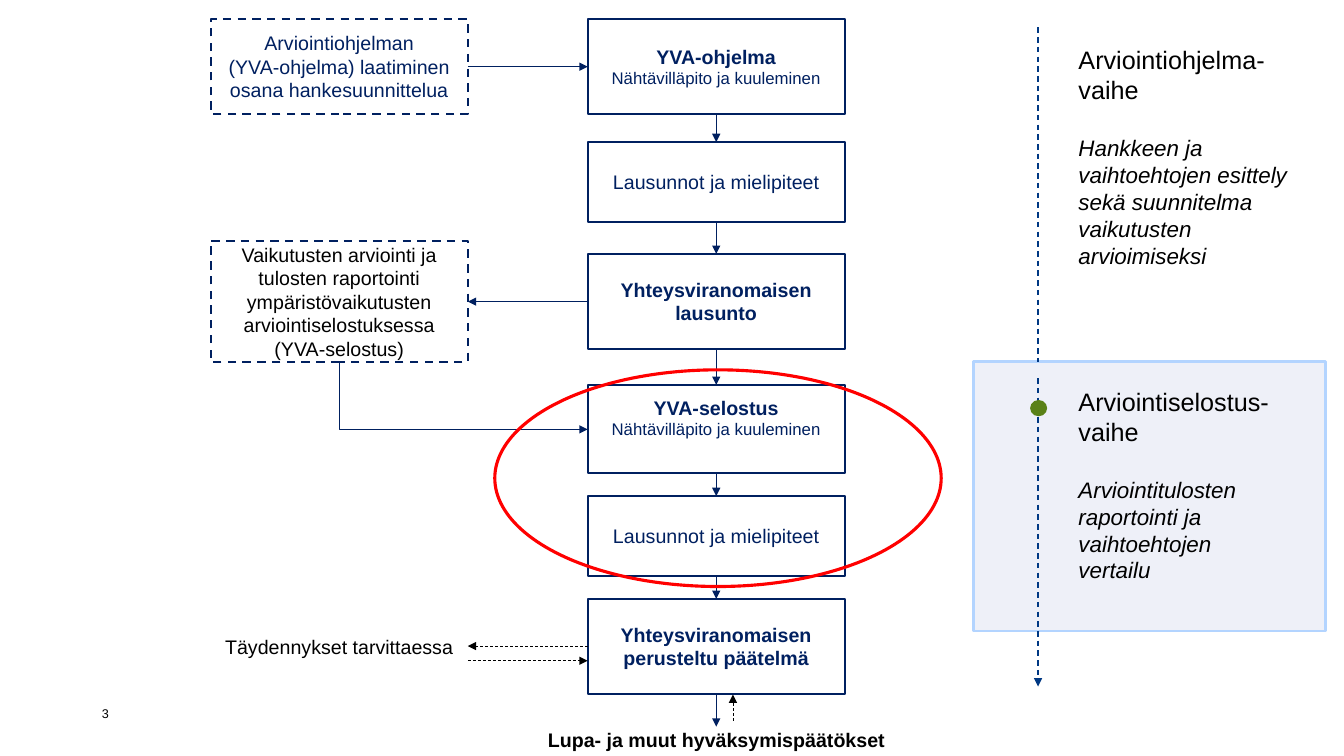
"""Build a flow chart slide of the environmental impact assessment procedure."""
from lxml import etree
from pptx import Presentation
from pptx import util as u
from pptx.dml.color import RGBColor
from pptx.enum import dml, shapes, text
from pptx.oxml import ns

COLORS = {
    "navy": "002060", "black": "000000", "white": "FFFFFF", "red": "FF0000",
    "timeline": "003883", "dot": "5A8117", "panel": "D8DEEF", "panel_edge": "B3D4FF",
}
BOX_WIDTH = 6.48
MAIN_LEFT, SIDE_LEFT = 14.81, 5.31
MAIN_CENTER, SIDE_CENTER = MAIN_LEFT + BOX_WIDTH / 2, SIDE_LEFT + BOX_WIDTH / 2
SIDE_RIGHT = SIDE_LEFT + BOX_WIDTH
DECISION_TOP = 18.31
TIMELINE_X = 26.16
HEARING = ("Nähtävilläpito ja kuuleminen", 12, False)
OPINIONS = ("Lausunnot ja mielipiteet", 14, False)
STEPS = [
    (0.48, 2.39, [("YVA-ohjelma", 14, True), HEARING]),
    (3.58, 2.01, [OPINIONS]),
    (6.4, 2.39, [("Yhteysviranomaisen lausunto", 14, True)]),
    (9.7, 2.21, [("YVA-selostus", 14, True), HEARING]),
    (12.5, 2.01, [OPINIONS]),
    (15.09, 2.39, [("Yhteysviranomaisen\vperusteltu päätelmä", 14, True)]),
]
SIDE_BOXES = [
    (0.48, 2.39, "Arviointiohjelman\v(YVA-ohjelma) laatiminen osana hankesuunnittelua",
     "navy", "navy"),
    (6.07, 3.05, "Vaikutusten arviointi ja tulosten raportointi ympäristövaikutusten "
     "arviointiselostuksessa (YVA-selostus)", "black", "navy"),
    (15.09, 2.41, "Täydennykset tarvittaessa", "black", "white"),
]
STAGES = [
    (1.12, 5.74, ["Arviointiohjelma-", "vaihe"],
     "Hankkeen ja vaihtoehtojen esittely sekä suunnitelma vaikutusten arvioimiseksi"),
    (9.73, 5.82, ["Arviointiselostus-vaihe"],
     "Arviointitulosten raportointi ja vaihtoehtojen\vvertailu"),
]


def rgb(name):
    """Return a named colour."""
    return RGBColor.from_string(COLORS[name])


def style_line(line, color, width, dashed=False):
    """Set the colour, width and dash of a line."""
    line.color.rgb = rgb(color)
    line.width = u.Pt(width)
    if dashed:
        line.dash_style = dml.MSO_LINE.DASH


def style_para(para, size, color, bold=False, italic=False):
    """Format every run of a paragraph."""
    for span in para.runs:
        span.font.name = "Arial"
        span.font.size = u.Pt(size)
        span.font.bold = bold
        span.font.italic = italic
        span.font.color.rgb = rgb(color)


def add_figure(page, kind, frame, fill=None, edge=None, width=1.5, dashed=False):
    """Add a preset shape without a shadow."""
    figure = page.shapes.add_shape(kind, *map(u.Cm, frame))
    figure.shadow.inherit = False
    if fill:
        figure.fill.solid()
        figure.fill.fore_color.rgb = rgb(fill)
    else:
        figure.fill.background()
    if edge:
        style_line(figure.line, edge, width, dashed)
    else:
        figure.line.fill.background()
    return figure


def add_box(page, frame, rows, color="navy", edge="navy", dashed=False):
    """Add a white box with centred rows of (wording, size, bold)."""
    box = add_figure(page, shapes.MSO_SHAPE.RECTANGLE, frame, "white", edge, 1.5, dashed)
    content = box.text_frame
    content.word_wrap = True
    content.vertical_anchor = text.MSO_ANCHOR.MIDDLE
    content.text = "\n".join(wording for wording, _, _ in rows)
    for para, (_, size, bold) in zip(content.paragraphs, rows):
        para.alignment = text.PP_ALIGN.CENTER
        style_para(para, size, color, bold)
    return box


def add_arrow(page, start, end, color="navy", width=0.5, dashed=False, head=True,
              kind=shapes.MSO_CONNECTOR.STRAIGHT):
    """Add a connector, with an arrowhead at its end unless told otherwise."""
    arrow = page.shapes.add_connector(kind, *map(u.Cm, (*start, *end)))
    style_line(arrow.line, color, width, dashed)
    if head:
        tail = etree.SubElement(arrow.line._get_or_add_ln(), ns.qn("a:tailEnd"))
        tail.set("type", "triangle")
    etree.SubElement(arrow._element.spPr, ns.qn("a:effectLst"))
    return arrow


def add_corner_arrow(page, start, end):
    """Add an arrow that goes down from start and then right to end."""
    (x1, y1), (x2, y2) = start, end
    mid_x, mid_y = (x1 + x2) / 2, (y1 + y2) / 2
    half_width, half_height = (y2 - y1) / 2, (x2 - x1) / 2
    arrow = add_arrow(page, (mid_x + half_width, mid_y - half_height),
                      (mid_x - half_width, mid_y + half_height),
                      kind=shapes.MSO_CONNECTOR.ELBOW)
    properties = arrow._element.spPr
    properties.find(ns.qn("a:xfrm")).set("rot", str(270 * 60000))
    properties.find(ns.qn("a:prstGeom")).set("prst", "bentConnector2")


def add_text(page, frame, paragraphs):
    """Add a text box without margins and return its text frame."""
    content = page.shapes.add_textbox(*map(u.Cm, frame)).text_frame
    content.word_wrap = True
    content.margin_left = content.margin_right = 0
    content.margin_top = content.margin_bottom = 0
    content.text = "\n".join(paragraphs)
    return content


def add_stage(page, top, height, heading, summary):
    """Add a stage heading with its italic summary."""
    content = add_text(page, (27.18, top, 5.46, height), heading + [summary])
    *titles, body = content.paragraphs
    for para in titles:
        style_para(para, 18, "black")
    body.space_before = u.Pt(21)
    style_para(body, 16, "black", italic=True)


def add_flow(page):
    """Add the boxes of the procedure and the arrows between them."""
    boxes = [add_box(page, (MAIN_LEFT, top, BOX_WIDTH, height), rows)
             for top, height, rows in STEPS]
    boxes[3].text_frame.margin_bottom = u.Cm(0.7)
    for top, height, wording, color, edge in SIDE_BOXES:
        add_box(page, (SIDE_LEFT, top, BOX_WIDTH, height), [(wording, 14, False)],
                color, edge, True)
    add_box(page, (12.7, DECISION_TOP, 10.72, 0.64),
            [("Lupa- ja muut hyväksymispäätökset", 14, True)], "black", "white", True)
    next_tops = [top for top, _, _ in STEPS[1:]] + [DECISION_TOP]
    for (top, height, _), next_top in zip(STEPS, next_tops):
        add_arrow(page, (MAIN_CENTER, top + height), (MAIN_CENTER, next_top))
    add_arrow(page, (SIDE_RIGHT, 1.68), (MAIN_LEFT, 1.68))
    add_arrow(page, (MAIN_LEFT, 7.6), (SIDE_RIGHT, 7.6))
    add_corner_arrow(page, (SIDE_CENTER, 9.12), (MAIN_LEFT, 10.82))
    for start, end in [((MAIN_LEFT, 16.28), (SIDE_RIGHT, 16.28)),
                       ((SIDE_RIGHT, 16.65), (MAIN_LEFT, 16.65)),
                       ((18.47, 18.16), (18.47, 17.5))]:
        add_arrow(page, start, end, "black", dashed=True)


def main():
    """Build and save the deck."""
    deck = Presentation()
    deck.slide_width, deck.slide_height = u.Cm(33.87), u.Cm(19.05)
    page = deck.slides.add_slide(deck.slide_layouts[6])
    panel = add_figure(page, shapes.MSO_SHAPE.RECTANGLE, (24.54, 9.12, 8.86, 6.78),
                       "panel", "panel_edge", 2)
    tint = panel.fill._xPr.find(ns.qn("a:solidFill"))[0]
    etree.SubElement(tint, ns.qn("a:alpha")).set("val", "43000")
    number = add_text(page, (2.57, 17.7, 1.35, 0.56), ["3"])
    number.vertical_anchor = text.MSO_ANCHOR.MIDDLE
    style_para(number.paragraphs[0], 9, "black")
    add_flow(page)
    add_arrow(page, (TIMELINE_X, 0.69), (TIMELINE_X, 9.12), "timeline", 1, True, False)
    add_arrow(page, (TIMELINE_X, 9.53), (TIMELINE_X, 17.3), "timeline", 1, True)
    for stage in STAGES:
        add_stage(page, *stage)
    add_figure(page, shapes.MSO_SHAPE.OVAL, (25.96, 10.08, 0.43, 0.41), "dot")
    add_figure(page, shapes.MSO_SHAPE.OVAL, (12.47, 9.32, 11.25, 5.46), None, "red", 2.25)
    deck.save("out.pptx")


if __name__ == "__main__":
    main()
